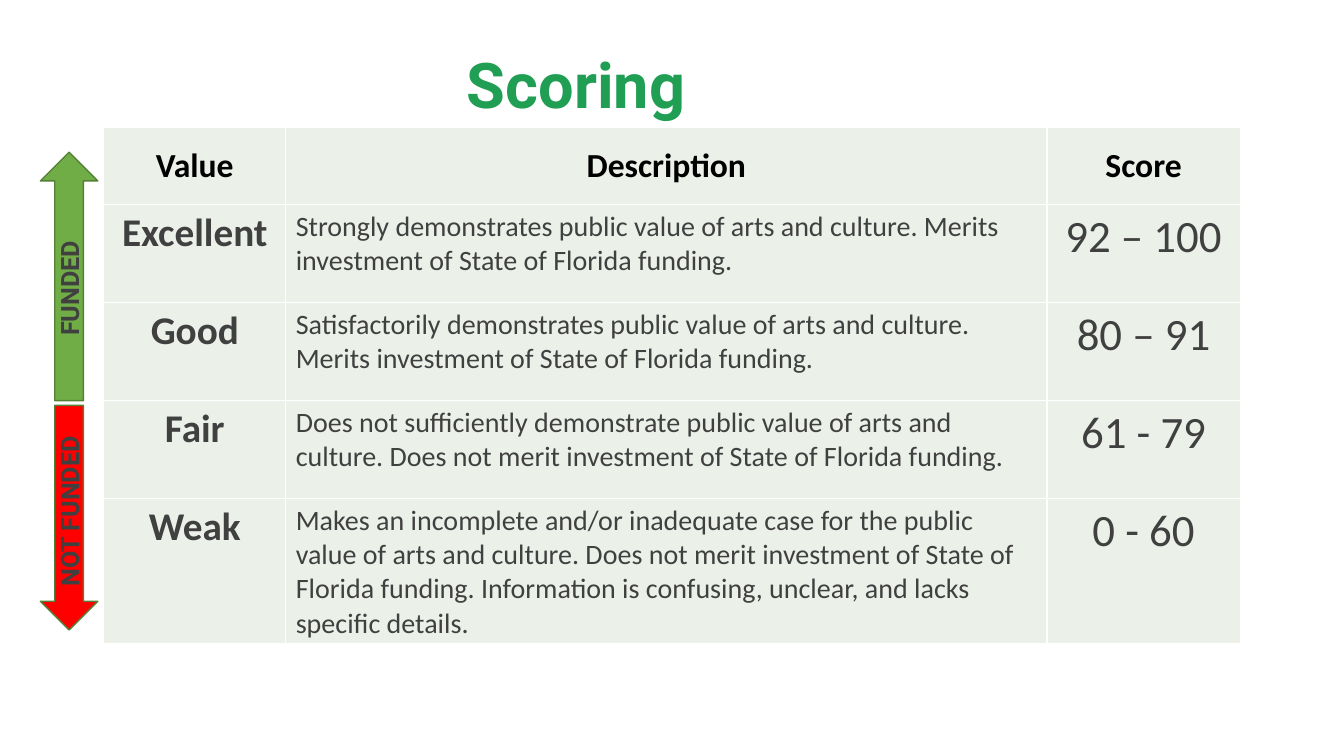
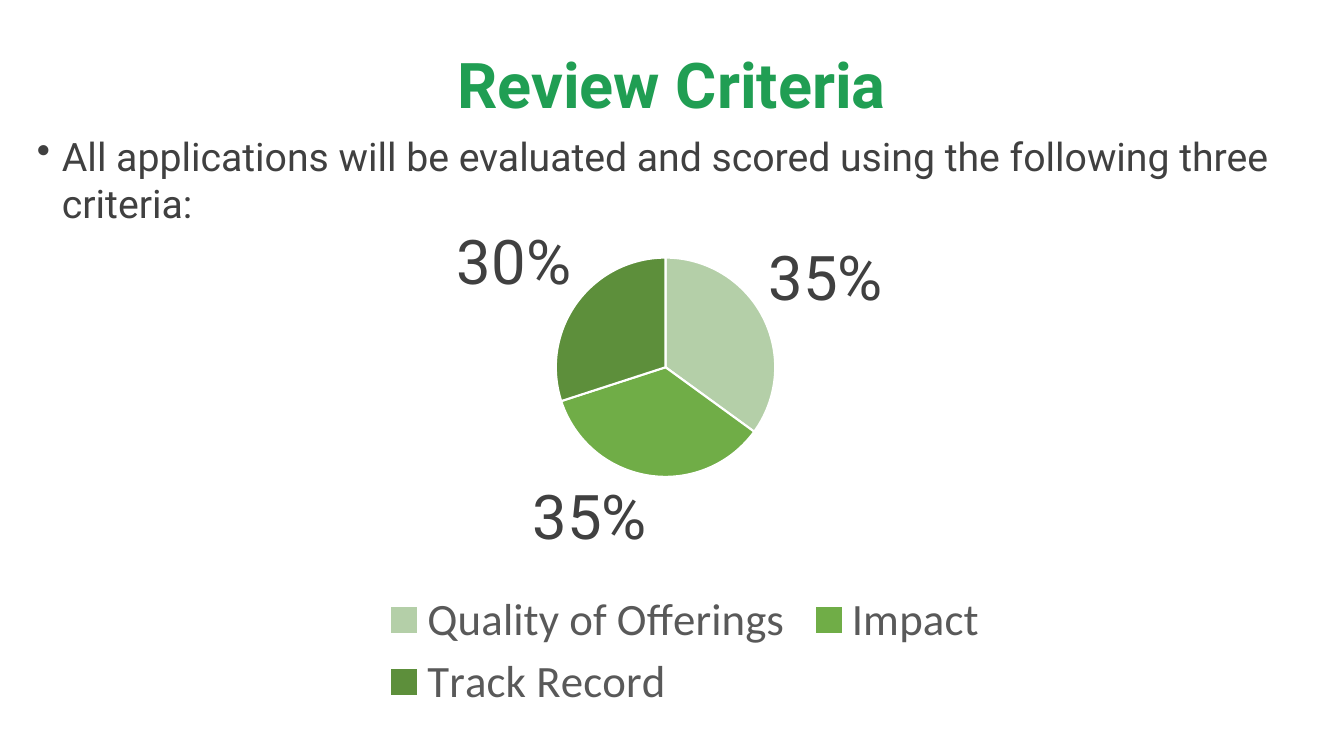
from typing import NamedTuple

from lxml import etree
from pptx import Presentation, util as u
from pptx.chart import data as cd
from pptx.dml.color import RGBColor
from pptx.enum import chart as ch, shapes, text
from pptx.oxml import ns

W, H = u.Inches(13.33), u.Inches(7.5)
MID = text.PP_ALIGN.CENTER
LEFT = text.PP_ALIGN.LEFT


class Theme:
    head, body = "Roboto", "Calibri"
    title, ink, black, grey = "209E53", "404040", "000000", "595959"
    cell, white = "EBF1E9", "FFFFFF"
    good, bad, edge = "70AD47", "FF0000", "538035"
    pie = ("B4CFA8", "70AD47", "5D8F3B")
    title_pt, lead_pt, tag_pt = 45, 28, 18
    head_pt, row_pts = 24, (28, 20, 32)
    label_pt, key_pt = 44, 32


class Box(NamedTuple):
    """Left, top, width and height in EMU."""
    x: int
    y: int
    w: int
    h: int

    def inner(self, x, y, w, h):
        """Inner box, given as shares of this one."""
        return Box(int(self.x + x * self.w), int(self.y + y * self.h),
                   int(w * self.w), int(h * self.h))


def area(x, y, w, h):
    """Box given in percent of the slide."""
    return Box(0, 0, W, H).inner(x / 100, y / 100, w / 100, h / 100)


def rgb(code):
    return RGBColor.from_string(code)


def style(font, size, color, name, bold=False):
    font.size, font.name, font.bold = u.Pt(size), name, bold
    font.color.rgb = rgb(color)


def paint(shape, fill, line, width):
    shape.fill.solid()
    shape.fill.fore_color.rgb = rgb(fill)
    shape.line.color.rgb = rgb(line)
    shape.line.width = u.Pt(width)


def write(slide, box, words, size, color, bold=False, bullet=False):
    shape = slide.shapes.add_textbox(*box)
    frame = shape.text_frame
    frame.word_wrap = True
    frame.text = words
    para = frame.paragraphs[0]
    if bullet:
        props = para._p.get_or_add_pPr()
        props.set("marL", str(u.Inches(0.25)))
        props.set("indent", str(-u.Inches(0.25)))
        etree.SubElement(props, ns.qn("a:buChar")).set("char", "•")
    style(para.runs[0].font, size, color, Theme.head, bold)
    return shape


def title(slide, words, left):
    write(slide, area(left, 5.33, 36, 11.47), words,
          Theme.title_pt, Theme.title, bold=True)


def border(cell):
    props = cell._tc.get_or_add_tcPr()
    for side in "LRTB":
        line = etree.SubElement(props, ns.qn("a:ln" + side), w=str(u.Pt(1)))
        fill = etree.SubElement(line, ns.qn("a:solidFill"))
        etree.SubElement(fill, ns.qn("a:srgbClr"), val=Theme.white)


def rubric(slide, box, rows, cols, tall):
    """Table whose column widths and row heights are shares of the box."""
    table = slide.shapes.add_table(len(rows), len(cols), *box).table
    for col, share in zip(table.columns, cols):
        col.width = int(box.w * share)
    for row, share in zip(table.rows, tall):
        row.height = int(box.h * share)
    for r, row in enumerate(rows):
        for c, words in enumerate(row):
            cell = table.cell(r, c)
            border(cell)
            cell.fill.solid()
            cell.fill.fore_color.rgb = rgb(Theme.cell)
            cell.text = words
            para = cell.text_frame.paragraphs[0]
            para.alignment = LEFT if r and c == 1 else MID
            if r == 0:
                cell.vertical_anchor = text.MSO_ANCHOR.MIDDLE
            style(para.runs[0].font,
                  Theme.row_pts[c] if r else Theme.head_pt,
                  Theme.ink if r else Theme.black,
                  Theme.body, bold=r == 0 or c == 0)


def gauge(slide, box):
    """Up and down arrows, each with a label that reads upwards."""
    kind = shapes.MSO_SHAPE
    arrows = (
        (kind.UP_ARROW, 0, 0.52, Theme.good, "FUNDED", 0.27, 0.27),
        (kind.DOWN_ARROW, 0.53, 0.47, Theme.bad, "NOT FUNDED", 0.71, 0.44),
    )
    thick = u.Inches(0.4)
    for form, top, tall, fill, words, mid, size in arrows:
        arrow = slide.shapes.add_shape(form, *box.inner(0, top, 1, tall))
        arrow.shadow.inherit = False
        paint(arrow, fill, Theme.edge, 1)
        wide = int(box.h * size)
        spot = Box(box.x + (box.w - wide) // 2,
                   int(box.y + box.h * mid) - thick // 2, wide, thick)
        tag = write(slide, spot, words, Theme.tag_pt, Theme.ink, bold=True)
        tag.rotation = 270


def fix(node, index, inner, **shares):
    """Give a chart region a fixed place, in shares of the chart."""
    for old in node.findall(ns.qn("c:layout")):
        node.remove(old)
    layout = etree.Element(ns.qn("c:layout"))
    node.insert(index, layout)
    manual = etree.SubElement(layout, ns.qn("c:manualLayout"))
    rules = {"layoutTarget": "inner"} if inner else {}
    rules.update(xMode="edge", yMode="edge", **shares)
    for key, val in rules.items():
        etree.SubElement(manual, ns.qn("c:" + key), val=str(val))


def pie(slide, box, names, vals):
    data = cd.CategoryChartData(number_format="0%")
    data.categories = names
    data.add_series("Series 1", vals)
    chart = slide.shapes.add_chart(ch.XL_CHART_TYPE.PIE, *box, data).chart
    chart.has_title = False
    style(chart.font, 10, Theme.black, Theme.body)

    chart.has_legend = True
    key = chart.legend
    key.position = ch.XL_LEGEND_POSITION.BOTTOM
    key.include_in_layout = False
    style(key.font, Theme.key_pt, Theme.grey, Theme.body)

    plot = chart.plots[0]
    plot.vary_by_categories = True
    for i, color in enumerate(Theme.pie):
        paint(plot.series[0].points[i].format, color, Theme.white, 1.5)
    plot.has_data_labels = True
    tags = plot.data_labels
    tags.show_value = True
    tags.show_percentage = False
    tags.number_format, tags.number_format_is_linked = "0%", False
    tags.position = ch.XL_LABEL_POSITION.OUTSIDE_END
    style(tags.font, Theme.label_pt, Theme.ink, Theme.head)

    area_xml = chart._chartSpace.find(".//" + ns.qn("c:plotArea"))
    fix(area_xml, 0, True, x=0.41, y=0.11, w=0.17, h=0.43)
    fix(key._element, 1, False, x=0.27, y=0.75, w=0.48, h=0.25)


def scoring(slide):
    title(slide, "Scoring", 34)
    rows = (
        ("Value", "Description", "Score"),
        ("Excellent", "Strongly demonstrates public value of arts and "
         "culture. Merits investment of State of Florida funding.",
         "92 – 100"),
        ("Good", "Satisfactorily demonstrates public value of arts and "
         "culture. Merits investment of State of Florida funding.",
         "80 – 91"),
        ("Fair", "Does not sufficiently demonstrate public value of arts and "
         "culture. Does not merit investment of State of Florida funding.",
         "61 - 79"),
        ("Weak", "Makes an incomplete and/or inadequate case for the public "
         "value of arts and culture. Does not merit investment of State of "
         "Florida funding. Information is confusing, unclear, and lacks "
         "specific details.", "0 - 60"),
    )
    rubric(slide, area(7.73, 16.8, 84.55, 68.27), rows,
           cols=(0.16, 0.67, 0.17), tall=(0.15, 0.19, 0.19, 0.19, 0.28))
    gauge(slide, area(3, 20.13, 4.28, 63.2))


def criteria(slide):
    title(slide, "Review Criteria", 33.3)
    write(slide, area(2, 16.8, 96, 14),
          "All applications will be evaluated and scored using the "
          "following three criteria:",
          Theme.lead_pt, Theme.ink, bullet=True)
    pie(slide, area(2, 26.4, 96, 68.27),
        ("Quality of Offerings", "Impact", "Track Record"),
        (0.35, 0.35, 0.3))


def main():
    deck = Presentation()
    deck.slide_width, deck.slide_height = W, H
    for build in (scoring, criteria):
        build(deck.slides.add_slide(deck.slide_layouts[6]))
    deck.save("out.pptx")


if __name__ == "__main__":
    main()
